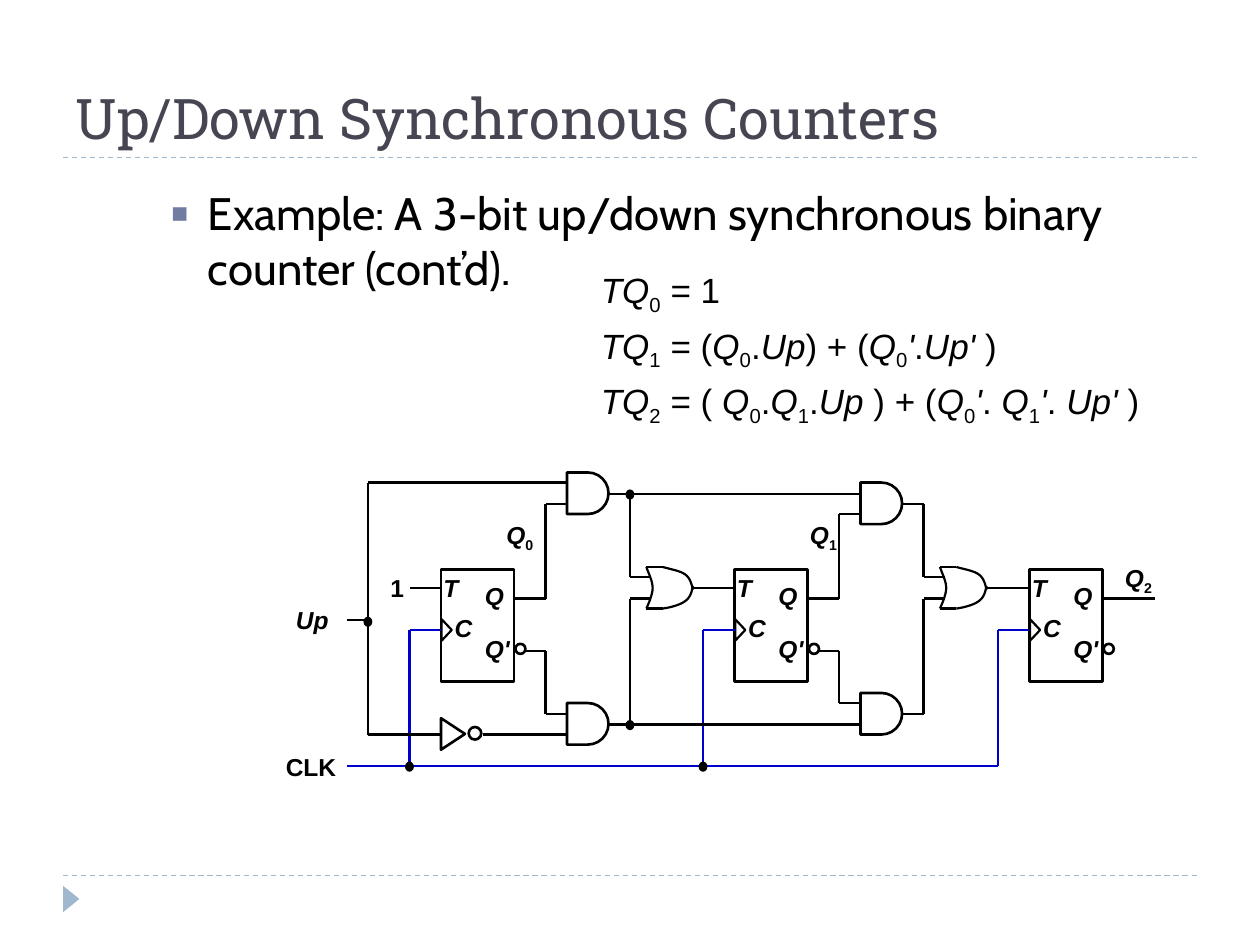
from pptx import Presentation
from pptx.dml.color import RGBColor
from pptx.enum.dml import MSO_LINE
from pptx.enum.shapes import MSO_CONNECTOR, MSO_SHAPE
from pptx.enum.text import MSO_ANCHOR, MSO_AUTO_SIZE, PP_ALIGN
from pptx.oxml.xmlchemy import OxmlElement
from pptx.util import Inches, Pt

INK, CLOCK, RULE = "000000", "0000CC", "9FB8CD"
TITLE = "Up/Down Synchronous Counters"
BODY = "Example: A 3-bit up/down synchronous binary counter (cont’d)."

# Runs are (text, style): "i" italic, "s" subscript, "" plain
Q0, Q1 = [[("Q", "i"), (n, "s")] for n in "01"]
DOT, PRIME, UP_BAR = (".", ""), ("'", "i"), [("Up' ", "i"), (")", "")]
FORMULAS = [
    [("TQ", "i"), ("0", "s"), (" = 1", "")],
    [("TQ", "i"), ("1", "s"), (" = (", ""), *Q0, DOT, ("Up", "i"),
     (") + (", ""), *Q0, PRIME, DOT, *UP_BAR],
    [("TQ", "i"), ("2", "s"), (" = ( ", ""), *Q0, DOT, *Q1, DOT,
     ("Up ", "i"), (") + (", ""), *Q0, PRIME, (". ", ""), *Q1, PRIME,
     (". ", ""), *UP_BAR],
]
LABELS = [  # left, top, width, runs
    (3, 4.5, 0.31, [("1", "")]),
    (2.25, 4.75, 0.46, [("Up", "i")]),
    (2.17, 5.92, 0.6, [("CLK", "")]),
    (3.92, 4.08, 0.42, Q0),
    (6.33, 4.08, 0.42, Q1),
    (8.83, 4.42, 0.42, [("Q", "i"), ("2", "s")]),
]
PINS = [  # offset from the flip-flop's left edge, top, width, name, wraps
    (-0.08, 4.5, 0.32, "T", False),
    (0.01, 4.82, 0.34, "C", False),
    (0.25, 4.56, 0.35, "Q", False),
    (0.25, 4.98, 0.42, "Q'", True),
]
FLOP_X = [3.5, 5.83, 8.17]
GATES = [(3.75, 5.58), (3.83, 5.5)]  # tops of upper and lower AND gates
Q_IN = [(4, 5.67), (4.08, 5.58)]  # heights of the wires from Q and Q'
OUT = [(3.92, 5.75), (4, 5.67)]  # heights of the gate outputs
DOTS = [(3.25, 6.08), (5.58, 6.08), (5, 3.92), (5, 5.75), (2.92, 4.93)]
WIRES = [
    [(4.5, 3.83), (2.92, 3.83), (2.92, 5.83), (3.5, 5.83)],
    [(2.75, 4.92), (2.92, 4.92)],
    [(3.25, 4.67), (3.5, 4.67)],
    [(3.83, 5.83), (4.5, 5.83)],
    [(5, 3.92), (6.83, 3.92)],
    [(5, 5.75), (6.83, 5.75)],
    [(8.75, 4.75), (9.17, 4.75)],
]
# Curves of an OR gate, as offsets from its left end at the middle height
OR_CURVES = [
    [(0, -.17), (.02, -.11), (.05, -.06), (.05, 0),
     (.05, .05), (.01, .14), (0, .16)],
    [(.13, -.17), (.2, -.15), (.27, -.14), (.31, -.11),
     (.35, -.08), (.36, -.03), (.37, .01)],
    [(.13, .16), (.2, .15), (.27, .13), (.31, .1),
     (.35, .07), (.36, .03), (.37, -.02)],
]

prs = Presentation()
prs.slide_width, prs.slide_height = Inches(10), Inches(7.5)
slide = prs.slides.add_slide(prs.slide_layouts[1])


def rgb(color):
    return RGBColor.from_string(color)


def box(*sizes):
    return [Inches(size) for size in sizes]


def move(shape, *place):
    shape.left, shape.top, shape.width, shape.height = box(*place)


def add_run(para, text, size, face="Arial", color=INK, style="", bold=None):
    run = para.add_run()
    run.text = text
    font = run.font
    font.name, font.size, font.bold = face, Pt(size), bold
    font.italic = style == "i"
    font.color.rgb = rgb(color)
    if style == "s":
        run._r.get_or_add_rPr().set("baseline", "-25000")


def add_text(owner, place, lines, size, bold=None, wrap=True):
    frame = owner.add_textbox(*box(*place)).text_frame
    frame.word_wrap = wrap
    frame.auto_size = MSO_AUTO_SIZE.SHAPE_TO_FIT_TEXT
    for n, runs in enumerate(lines):
        para = frame.add_paragraph() if n else frame.paragraphs[0]
        if n:
            para.space_before = Pt(4.6)
        for text, style in runs:
            add_run(para, text, size, style=style, bold=bold)


def add_shape(owner, kind, place, width=1.5, fill=None, line=INK, turn=0):
    shape = owner.add_shape(kind, *box(*place))
    shape.rotation = turn
    paint(shape, width, fill, line)


def paint(shape, width, fill=None, line=INK):
    shape.shadow.inherit = False
    if fill:
        shape.fill.solid()
        shape.fill.fore_color.rgb = rgb(fill)
    else:
        shape.fill.background()
    if line:
        shape.line.color.rgb = rgb(line)
        shape.line.width = Pt(width)
    else:
        shape.line.fill.background()


def add_wire(owner, points, color=INK, width=1.25, dash=None):
    """Join the points in turn with straight connectors."""
    for start, end in zip(points, points[1:]):
        wire = owner.add_connector(MSO_CONNECTOR.STRAIGHT, *box(*start, *end))
        wire.line.color.rgb = rgb(color)
        wire.line.width = Pt(width)
        wire.line.dash_style = dash
        wire._element.spPr.append(OxmlElement("a:effectLst"))


def add_curve(owner, points, steps=8):
    """Draw chained cubic Bezier curves as one open outline."""
    spots = []
    for k in range(0, len(points) - 1, 3):
        for t in [n / steps for n in range(1, steps + 1)]:
            parts = ((1 - t) ** 3, 3 * t * (1 - t) ** 2,
                     3 * t * t * (1 - t), t ** 3)
            spots.append(box(*(sum(w * p[axis] for w, p in
                                   zip(parts, points[k:k + 4]))
                               for axis in (0, 1))))
    pen = owner.build_freeform(*box(*points[0]))
    pen.add_line_segments(spots, close=False)
    paint(pen.convert_to_shape(), 1.25)


def add_flop(owner, x):
    add_shape(owner, MSO_SHAPE.RECTANGLE, (x, 4.52, 0.58, 0.89))
    add_shape(owner, MSO_SHAPE.ISOSCELES_TRIANGLE,
              (x - 0.04, 4.96, 0.17, 0.08), 1.25, turn=90)
    add_shape(owner, MSO_SHAPE.OVAL, (x + 0.59, 5.11, 0.08, 0.08))
    for dx, top, width, name, wrap in PINS:
        add_text(owner, (x + dx, top, width, 0.33), [[(name, "i")]],
                 14, True, wrap)
    add_wire(owner, [(x - 0.25, 6.08), (x - 0.25, 5), (x, 5)], CLOCK)


def add_stage(owner, x, tops, inputs, outputs):
    """Draw the AND and OR gates that follow a flip-flop."""
    pins = [(0.58, 4.75, 4.58), (0.67, 5.17, 4.75)]
    for top, y_in, y_out, (dx, pin, y_or) in zip(tops, inputs, outputs, pins):
        add_shape(owner, MSO_SHAPE.FLOWCHART_DELAY, (x + 1, top, 0.33, 0.33))
        add_wire(owner, [(x + dx, pin), (x + 0.83, pin),
                         (x + 0.83, y_in), (x + 1, y_in)])
        add_wire(owner, [(x + 1.33, y_out), (x + 1.5, y_out),
                         (x + 1.5, y_or), (x + 1.67, y_or)])
    left = x + 1.63
    for curve in OR_CURVES:
        add_curve(owner, [(left + dx, 4.67 + dy) for dx, dy in curve])
    for y in (4.5, 4.83):
        add_wire(owner, [(left, y), (left + 0.13, y)])
    add_wire(owner, [(x + 2, 4.67), (x + 2.33, 4.67)])


for y in (6.95, 1.25):
    add_wire(slide.shapes, [(0.5, y), (9.5, y)], RULE, 0.75, MSO_LINE.DASH)
add_shape(slide.shapes, MSO_SHAPE.ISOSCELES_TRIANGLE,
          (0.46, 7.07, 0.21, 0.13), fill=RULE, line=None, turn=90)

title, body = slide.shapes.title, slide.placeholders[1]
move(title, 0.5, 0.17, 9, 1.08)
move(body, 1.25, 1.42, 8.25, 0.92)
for holder in (title, body):
    holder.text_frame.auto_size = MSO_AUTO_SIZE.NONE
title.text_frame.vertical_anchor = MSO_ANCHOR.BOTTOM
para = title.text_frame.paragraphs[0]
para.alignment = PP_ALIGN.LEFT
add_run(para, TITLE, 32, "Roboto Slab", "464653")

para = body.text_frame.paragraphs[0]
props = para._p.get_or_add_pPr()
props.set("marL", str(Inches(0.3)))
props.set("indent", str(-Inches(0.3)))
tint = OxmlElement("a:buClr")
props.append(tint)
for parent, tag, key, value in [
        (tint, "a:srgbClr", "val", "727CA3"),
        (props, "a:buSzPct", "val", "120000"),
        (props, "a:buFont", "typeface", "Arial"),
        (props, "a:buChar", "char", "▪")]:
    item = OxmlElement(tag)
    item.set(key, value)
    parent.append(item)
para.space_before = Pt(0)
add_run(para, BODY, 26, "Cabin")

add_text(slide.shapes, (4.67, 2.08, 4.83, 1.23), FORMULAS, 20)

circuit = slide.shapes.add_group_shape().shapes
add_wire(circuit, [(2.75, 6.08), (7.92, 6.08)], CLOCK)
for x in FLOP_X:
    add_flop(circuit, x)
for stage in zip(FLOP_X, GATES, Q_IN, OUT):
    add_stage(circuit, *stage)
for points in WIRES:
    add_wire(circuit, points)
add_shape(circuit, MSO_SHAPE.FLOWCHART_EXTRACT,
          (3.47, 5.73, 0.25, 0.19), turn=90)
add_shape(circuit, MSO_SHAPE.OVAL, (3.72, 5.77, 0.1, 0.1))
for x, y in DOTS:
    add_shape(circuit, MSO_SHAPE.OVAL, (x - 0.03, y - 0.03, 0.06, 0.07),
              0.75, INK)
for left, top, width, runs in LABELS:
    add_text(circuit, (left, top, width, 0.33), [runs], 14, True, False)

prs.save("out.pptx")
